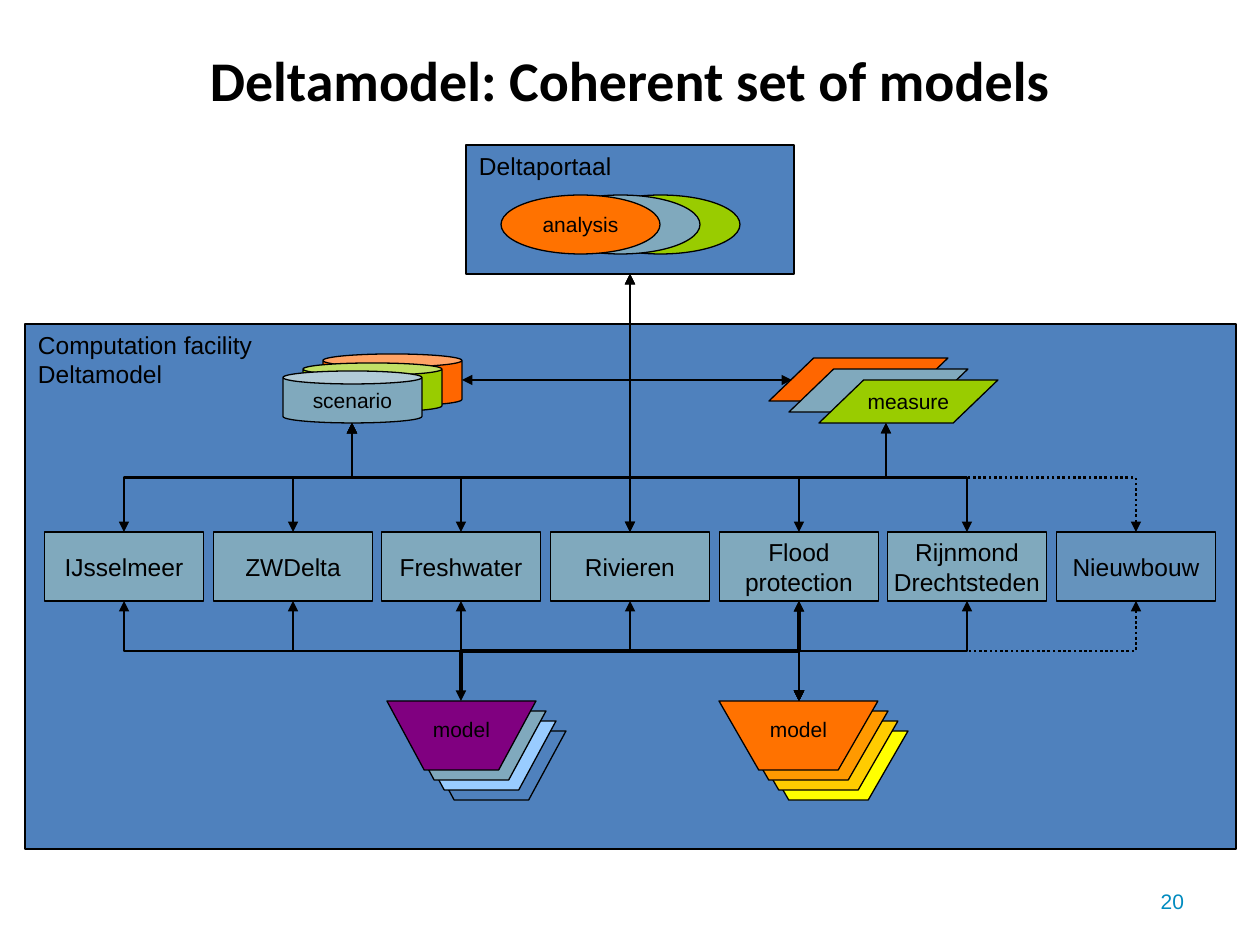
from pptx import Presentation
from pptx.dml.color import RGBColor
from pptx.enum.shapes import MSO_CONNECTOR, MSO_SHAPE
from pptx.enum.text import MSO_ANCHOR, PP_ALIGN
from pptx.oxml.ns import qn
from pptx.util import Pt
from lxml.etree import SubElement

COLORS = {
    "black": "000000", "blue": "4F81BD", "steel": "80A9BD", "sky": "99CCFF",
    "green": "99CC00", "orange": "FF7200", "red": "FF6600", "amber": "FF9900",
    "gold": "FFCC00", "yellow": "FFFF00", "purple": "800080", "teal": "008BBF",
}
PANELS = [
    ("Computation facility\nDeltamodel", 25, 324, 1211, 525),
    ("Deltaportaal", 466, 145, 328, 129),
]
STACKS = [
    (MSO_SHAPE.CAN, None, [
        ("", "red", 323, 354, 139, 52),
        ("", "green", 303, 363, 139, 49),
        ("scenario", "steel", 283, 371, 139, 52)]),
    (MSO_SHAPE.OVAL, None, [
        ("", "green", 581, 195, 159, 59),
        ("", "steel", 541, 195, 159, 59),
        ("analysis", "orange", 501, 195, 159, 59)]),
    (MSO_SHAPE.PARALLELOGRAM, 1.04, [
        ("", "red", 769, 358, 179, 43),
        ("", "steel", 789, 369, 179, 43),
        ("measure", "green", 819, 380, 179, 43)]),
]
BOXES = ["IJsselmeer", "ZWDelta", "Freshwater", "Rivieren",
         "Flood\nprotection", "Rijnmond Drechtsteden", "Nieuwbouw"]
MODELS = [
    (387, 149, ["purple", "steel", "sky", "blue"]),
    (719, 159, ["orange", "amber", "gold", "yellow"]),
]
FIRST, LAST = 124, 1136
BOX_W, BOX_H, BOX_TOP = 159, 69, 532
BOX_END = BOX_TOP + BOX_H
MODEL_TOP, MODEL_H, STEP = 701, 69, 10
PORTAL_END, DATA_END, DATA_MID = 274, 423, 380
SCENE, MEASURE = 352, 886
MIDS = [round(FIRST + i * (LAST - FIRST) / (len(BOXES) - 1)) for i in range(len(BOXES))]
HUBS = [SCENE, SCENE, SCENE, SCENE, MEASURE, SCENE, MEASURE]
SCALE = 914400 / 126


def px(n):
    return round(n * SCALE)


def paint(color):
    return RGBColor.from_string(COLORS[color])


def write(shape, text, size=14, color="black", font="Arial", bold=False,
          align=PP_ALIGN.CENTER, anchor=MSO_ANCHOR.MIDDLE, side=0, top=6):
    frame = shape.text_frame
    frame.word_wrap = True
    frame.vertical_anchor = anchor
    frame.margin_left = frame.margin_right = px(side)
    frame.margin_top = frame.margin_bottom = px(top)
    frame.text = text
    for para in frame.paragraphs:
        para.alignment = align
        para.font.size = Pt(size)
        para.font.name = font
        para.font.bold = bold
        para.font.color.rgb = paint(color)


def style(shape, fill):
    shape.shadow.inherit = False
    shape.fill.solid()
    shape.fill.fore_color.rgb = paint(fill)
    shape.line.color.rgb = paint("black")
    shape.line.width = Pt(0.75)
    return shape


def draw(slide, kind, fill, *rect):
    return style(slide.shapes.add_shape(kind, *map(px, rect)), fill)


def funnel(slide, fill, x, y, w, h):
    cut = w / 4
    form = slide.shapes.build_freeform(px(x), px(y))
    form.add_line_segments([(px(x + cut), px(y + h)), (px(x + w - cut), px(y + h)),
                            (px(x + w), px(y))], close=True)
    return style(form.convert_to_shape(), fill)


def link(slide, x1, y1, x2, y2, width=1.5, dots=False, bends=2):
    straight = x1 == x2
    kind = MSO_CONNECTOR.STRAIGHT if straight else MSO_CONNECTOR.ELBOW
    line = slide.shapes.add_connector(kind, *map(px, (x1, y1, x2, y2)))
    line.line.color.rgb = paint("black")
    line.line.width = Pt(width)
    props = line._element.spPr
    if not straight:
        wide, high = abs(y2 - y1), abs(x2 - x1)
        line.left, line.top = px((x1 + x2 - wide) / 2), px((y1 + y2 - high) / 2)
        line.width, line.height = px(wide), px(high)
        right, down = x2 > x1, y2 > y1
        xfrm = props.find(qn("a:xfrm"))
        xfrm.set("rot", str((270 if right else 90) * 60000))
        xfrm.set("flipH", str(int(right == down)))
        xfrm.set("flipV", "0")
        props.find(qn("a:prstGeom")).set("prst", f"bentConnector{bends + 1}")
    stroke = props.find(qn("a:ln"))
    if dots:
        SubElement(stroke, qn("a:prstDash"), val="sysDot")
    for end in ("a:headEnd", "a:tailEnd"):
        SubElement(stroke, qn(end), type="triangle")
    SubElement(props, qn("a:effectLst"))


def main():
    deck = Presentation()
    deck.slide_width, deck.slide_height = px(1260), px(945)
    slide = deck.slides.add_slide(deck.slide_layouts[6])

    title = slide.shapes.add_textbox(*map(px, (63, 0, 1134, 158)))
    write(title, "Deltamodel: Coherent set of models", size=32, font="Calibri", bold=True)
    page = slide.shapes.add_textbox(*map(px, (903, 876, 294, 50)))
    write(page, "20", size=12, color="teal", align=PP_ALIGN.RIGHT, side=13)

    for text, *rect in PANELS:
        panel = draw(slide, MSO_SHAPE.FLOWCHART_PROCESS, "blue", *rect)
        write(panel, text, align=PP_ALIGN.LEFT, anchor=MSO_ANCHOR.TOP, side=13)

    for kind, slant, parts in STACKS:
        for text, fill, *rect in parts:
            part = draw(slide, kind, fill, *rect)
            if slant:
                part.adjustments[0] = slant
            if text:
                write(part, text, size=12)

    for text, mid in zip(BOXES, MIDS):
        box = draw(slide, MSO_SHAPE.FLOWCHART_PROCESS, "steel",
                   mid - BOX_W / 2, BOX_TOP, BOX_W, BOX_H)
        write(box, text)
    tint = box._element.spPr.find(qn("a:solidFill"))[0]
    SubElement(tint, qn("a:alpha"), val="45000")

    for left, wide, fills in MODELS:
        for i, fill in reversed(list(enumerate(fills))):
            form = funnel(slide, fill, left + i * STEP, MODEL_TOP + i * STEP, wide, MODEL_H)
        write(form, "model", size=12, anchor=MSO_ANCHOR.TOP, top=16)

    core, base = MIDS[3], MIDS[4]
    for x in (462, 792):
        link(slide, core, PORTAL_END, x, DATA_MID, bends=1)
    link(slide, core, PORTAL_END, core, BOX_TOP)
    for mid, hub in zip(MIDS, HUBS):
        dots = mid == LAST
        width = 0.75 if mid == core else 1.5
        link(slide, mid, BOX_TOP, hub, DATA_END, width=width, dots=dots)
        link(slide, mid, BOX_END, base, MODEL_TOP, dots=dots)
    link(slide, MIDS[2], MODEL_TOP, base, BOX_END, width=2)

    deck.save("out.pptx")


if __name__ == "__main__":
    main()
